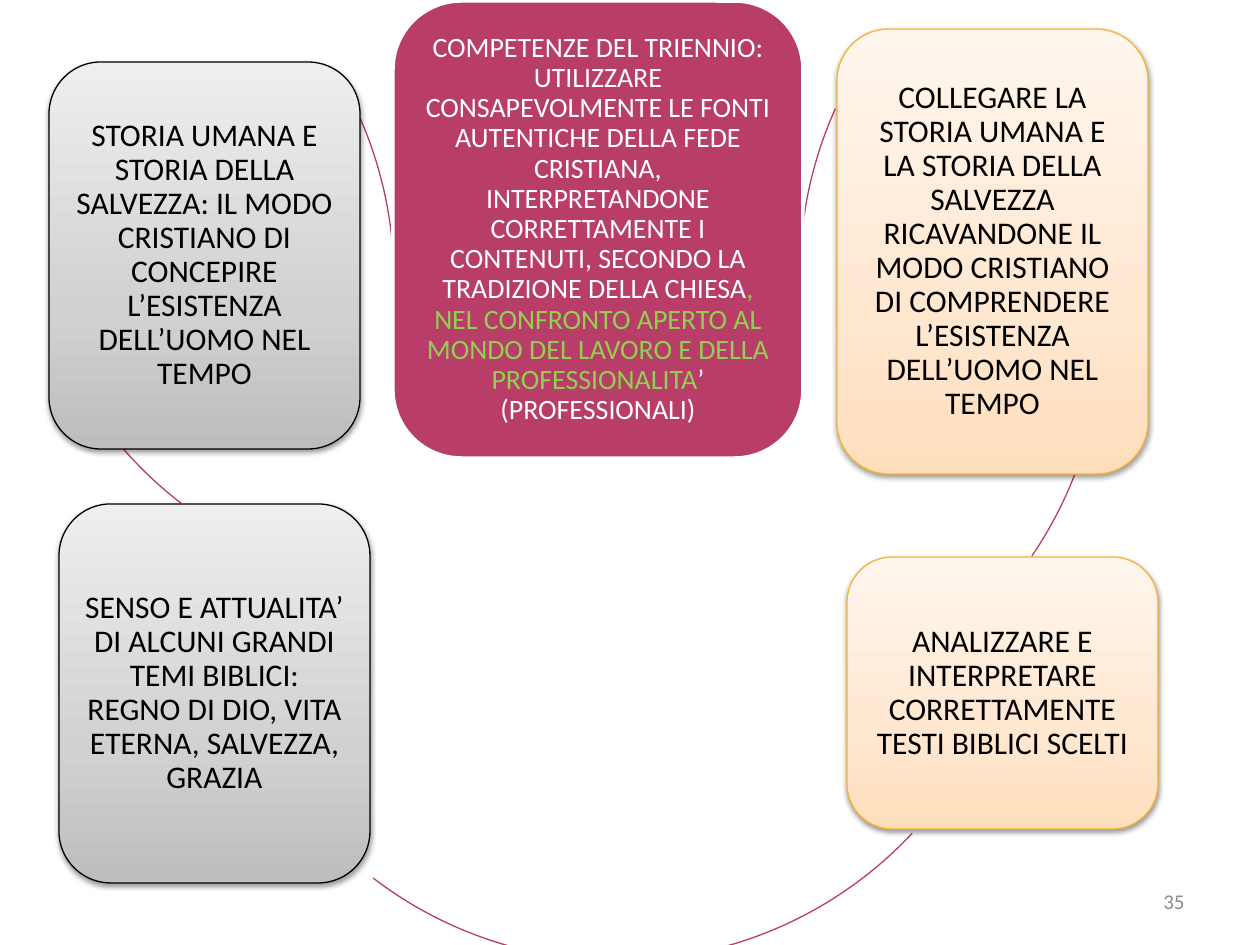
"""Build a slide of five competence boxes linked by circular arcs."""
from copy import deepcopy

from lxml import etree
from pptx import Presentation
from pptx.dml.color import RGBColor
from pptx.enum.shapes import MSO_SHAPE
from pptx.enum.text import MSO_ANCHOR, PP_ALIGN
from pptx.oxml.ns import qn
from pptx.util import Pt

ROUNDED, ARC = MSO_SHAPE.ROUNDED_RECTANGLE, MSO_SHAPE.ARC
MIDDLE = MSO_ANCHOR.MIDDLE
CENTER, RIGHT = PP_ALIGN.CENTER, PP_ALIGN.RIGHT

EMU_PER_PX = 914400 / 126
WHITE = RGBColor(0xFF, 0xFF, 0xFF)
BLACK = RGBColor(0, 0, 0)
MAGENTA = RGBColor(0xB8, 0x3D, 0x68)
GREEN = RGBColor(0x92, 0xD0, 0x50)
AMBER = RGBColor(0xF8, 0xB3, 0x33)
GREY = RGBColor(0x8C, 0x8C, 0x8C)
PEACH_STOPS = [(0, RGBColor(0xFF, 0xDE, 0xBC)), (0.35, RGBColor(0xFF, 0xE7, 0xD0)),
               (1, RGBColor(0xFF, 0xF6, 0xED))]
SILVER_STOPS = [(0, RGBColor(0xBD, 0xBD, 0xBD)), (0.35, RGBColor(0xD1, 0xD1, 0xD1)),
                (1, RGBColor(0xEE, 0xEE, 0xEE))]

COMPETENCE_BOX = (393, 1, 410, 457)
COMPETENCE = [
    ("COMPETENZE DEL TRIENNIO: UTILIZZARE CONSAPEVOLMENTE LE FONTI AUTENTICHE "
     "DELLA FEDE CRISTIANA, INTERPRETANDONE CORRETTAMENTE I CONTENUTI, SECONDO LA "
     "TRADIZIONE DELLA CHIESA", WHITE),
    (", NEL CONFRONTO APERTO AL MONDO DEL LAVORO E DELLA PROFESSIONALITA", GREEN),
    ("’ (PROFESSIONALI)", WHITE),
]
TOPICS = [
    ((837, 29, 311, 445), PEACH_STOPS, AMBER,
     "COLLEGARE LA STORIA UMANA E LA STORIA DELLA SALVEZZA RICAVANDONE IL MODO "
     "CRISTIANO DI COMPRENDERE L’ESISTENZA DELL’UOMO NEL TEMPO"),
    ((847, 557, 311, 272), PEACH_STOPS, AMBER,
     "ANALIZZARE E INTERPRETARE CORRETTAMENTE TESTI BIBLICI SCELTI"),
    ((59, 504, 311, 379), SILVER_STOPS, BLACK,
     "SENSO E ATTUALITA’ DI ALCUNI GRANDI TEMI BIBLICI: REGNO DI DIO, VITA ETERNA, "
     "SALVEZZA, GRAZIA"),
    ((49, 62, 311, 387), SILVER_STOPS, BLACK,
     "STORIA UMANA E STORIA DELLA SALVEZZA: IL MODO CRISTIANO DI CONCEPIRE "
     "L’ESISTENZA DELL’UOMO NEL TEMPO"),
]
CIRCLE = 806
ARCS = [
    (800, -129, 173.9, 204.2),
    (296, -74, 21.2, 34.3),
    (215, 155, 43.1, 127.4),
    (24, -219, 127.6, 138.8),
    (-412, -123, 336.4, 3),
]
PAGE_NUMBER_BOX, PAGE_NUMBER = (903, 876, 294, 50), "35"


def px(*lengths):
    return [round(length * EMU_PER_PX) for length in lengths]


def write(shape, runs, size, align):
    frame = shape.text_frame
    frame.word_wrap = True
    frame.vertical_anchor = MIDDLE
    paragraph = frame.paragraphs[0]
    paragraph.alignment = align
    paragraph.font.name, paragraph.font.size = "Calibri", Pt(size)
    for text, color in runs:
        run = paragraph.add_run()
        run.text = text
        run.font.color.rgb = color
    return frame


def add_box(slide, bounds, line_color, line_width, runs, size):
    box = slide.shapes.add_shape(ROUNDED, *px(*bounds))
    box.shadow.inherit = False
    box.line.color.rgb, box.line.width = line_color, Pt(line_width)
    frame = write(box, runs, size, CENTER)
    frame.paragraphs[0].line_spacing = 0.9
    inset, = px(9)
    frame.margin_left = frame.margin_right = inset
    frame.margin_top = frame.margin_bottom = inset
    return box


def fill_gradient(shape, stops):
    shape.fill.gradient()
    shape.fill.gradient_angle = 90
    stop_list = shape._element.spPr.find(".//" + qn("a:gsLst"))
    stop_list.append(deepcopy(stop_list[0]))
    for stop, (position, color) in zip(shape.fill.gradient_stops, stops):
        stop.position, stop.color.rgb = position, color


def add_shadow(shape):
    effects = shape._element.spPr.find(qn("a:effectLst"))
    shadow = etree.SubElement(effects, qn("a:outerShdw"), blurRad=str(Pt(3.1)),
                              dist=str(Pt(1.6)), dir="5400000", rotWithShape="0")
    color = etree.SubElement(shadow, qn("a:srgbClr"), val="000000")
    etree.SubElement(color, qn("a:alpha"), val="38000")


def add_arc(slide, left, top, start, end):
    arc = slide.shapes.add_shape(ARC, *px(left, top, CIRCLE, CIRCLE))
    arc.shadow.inherit = False
    arc.fill.background()
    arc.line.color.rgb, arc.line.width = MAGENTA, Pt(0.75)
    for index, degrees in enumerate((start, end)):
        arc.adjustments[index] = degrees * 0.6


def main():
    deck = Presentation()
    deck.slide_width, deck.slide_height = px(1260, 945)
    slide = deck.slides.add_slide(deck.slide_layouts[6])

    for arc in ARCS:
        add_arc(slide, *arc)
    competence = add_box(slide, COMPETENCE_BOX, WHITE, 2, COMPETENCE, 16)
    competence.fill.solid()
    competence.fill.fore_color.rgb = MAGENTA
    for bounds, stops, line_color, text in TOPICS:
        topic = add_box(slide, bounds, line_color, 0.75, [(text, BLACK)], 18)
        fill_gradient(topic, stops)
        add_shadow(topic)

    page_number = slide.shapes.add_textbox(*px(*PAGE_NUMBER_BOX))
    write(page_number, [(PAGE_NUMBER, GREY)], 12, RIGHT)
    deck.save("out.pptx")


if __name__ == "__main__":
    main()
